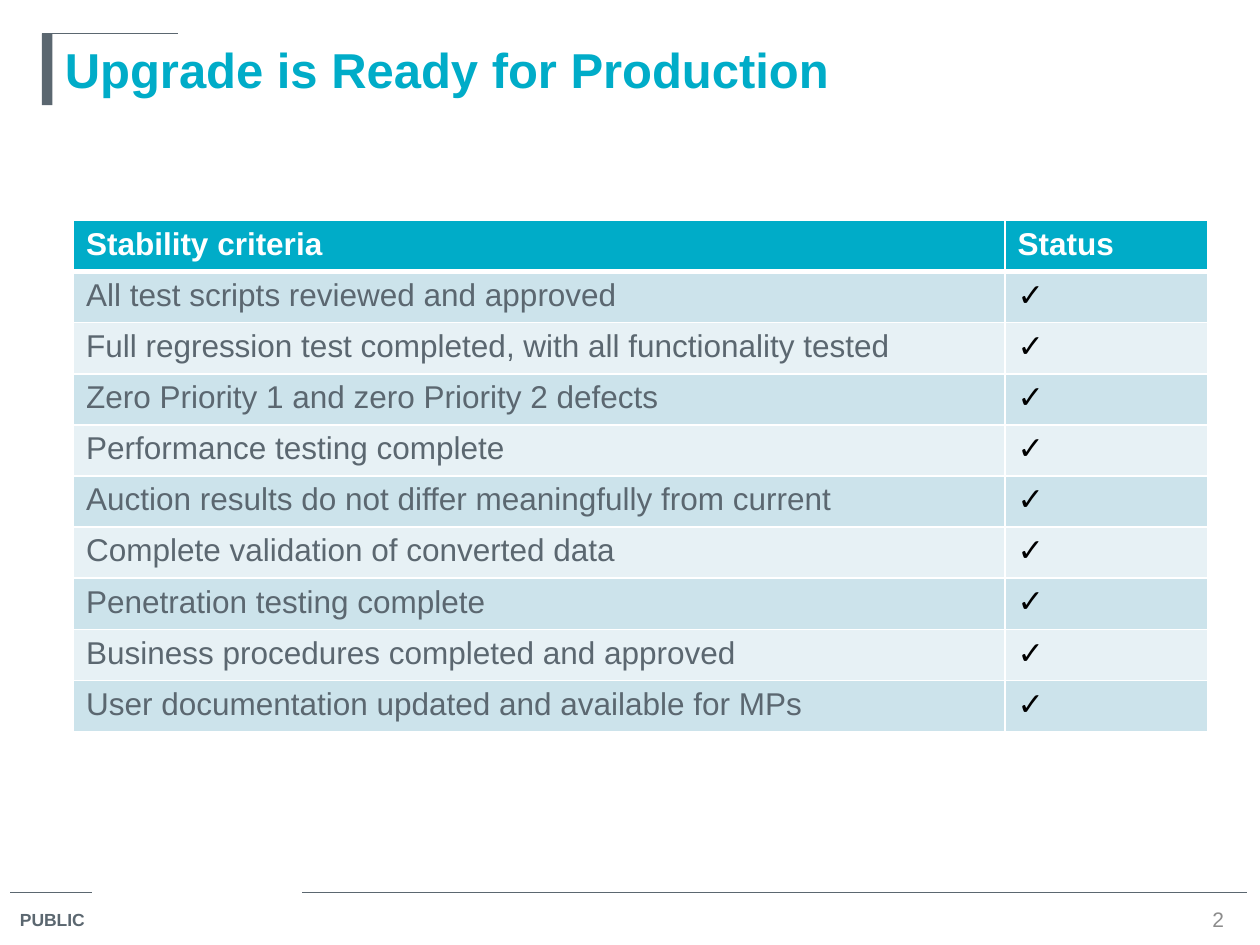
from pptx import Presentation
from pptx.dml.color import RGBColor
from pptx.enum.shapes import MSO_CONNECTOR, MSO_SHAPE
from pptx.enum.text import MSO_ANCHOR, PP_ALIGN
from pptx.oxml.ns import qn
from pptx.util import Pt
from lxml.etree import SubElement

TEAL = RGBColor(0x00, 0xAC, 0xC8)
SLATE = RGBColor(0x5B, 0x67, 0x70)
GRAY = RGBColor(0x8C, 0x8C, 0x8C)
WHITE = RGBColor(0xFF, 0xFF, 0xFF)
BLACK = RGBColor(0x00, 0x00, 0x00)
BAND_DARK = RGBColor(0xCC, 0xE3, 0xEB)
BAND_LIGHT = RGBColor(0xE7, 0xF1, 0xF5)


def write(frame, text, size, color, bold=False, bullet=None):
    frame.text = text
    paragraph = frame.paragraphs[0]
    if bullet:
        properties = paragraph._p.get_or_add_pPr()
        properties.set("marL", str(Pt(27)))
        properties.set("indent", str(-Pt(27)))
        SubElement(properties, qn("a:buFont"), typeface="Arial")
        SubElement(properties, qn("a:buChar"), char=bullet)
    paragraph.font.name = "Arial"
    paragraph.font.size = Pt(size)
    paragraph.font.bold = bold
    paragraph.font.color.rgb = color
    return paragraph


def add_borders(cell, bottom_width):
    properties = cell._tc.get_or_add_tcPr()
    for index, side in enumerate(("lnL", "lnR", "lnT", "lnB")):
        width = bottom_width if side == "lnB" else 1
        border = properties.makeelement(qn(f"a:{side}"), {"w": str(Pt(width))})
        fill = SubElement(border, qn("a:solidFill"))
        SubElement(fill, qn("a:srgbClr"), val=str(WHITE))
        properties.insert(index, border)


presentation = Presentation()
presentation.slide_width = Pt(720)
presentation.slide_height = Pt(540)
slide = presentation.slides.add_slide(presentation.slide_layouts[6])
shapes = slide.shapes

for left, right, y in [(5.8, 52.6, 510), (172.8, 712.8, 510), (24, 102, 19.2)]:
    rule = shapes.add_connector(MSO_CONNECTOR.STRAIGHT, Pt(left), Pt(y), Pt(right), Pt(y))
    rule.line.color.rgb = SLATE
    rule.line.width = Pt(0.75)
    SubElement(rule._element.spPr, qn("a:effectLst"))

accent_bar = shapes.add_shape(MSO_SHAPE.RECTANGLE, Pt(24), Pt(19.2), Pt(6), Pt(41))
accent_bar.shadow.inherit = False
accent_bar.fill.solid()
accent_bar.fill.fore_color.rgb = SLATE
accent_bar.line.fill.background()

classification = shapes.add_textbox(Pt(4.3), Pt(516.2), Pt(55.4), Pt(20)).text_frame
write(classification, "PUBLIC", 10, SLATE, True)

title = shapes.add_textbox(Pt(30), Pt(19), Pt(666), Pt(90)).text_frame
title.word_wrap = True
write(title, "Upgrade is Ready for Production", 28, TEAL, True)

criteria = [
    "All test scripts reviewed and approved",
    "Full regression test completed, with all functionality tested",
    "Zero Priority 1 and zero Priority 2 defects",
    "Performance testing complete",
    "Auction results do not differ meaningfully from current",
    "Complete validation of converted data",
    "Penetration testing complete",
    "Business procedures completed and approved",
    "User documentation updated and available for MPs",
]

checklist = shapes.add_table(len(criteria) + 1, 2, Pt(42), Pt(126), Pt(648), Pt(292)).table
checklist.columns[0].width = Pt(532.3)
checklist.columns[1].width = Pt(115.7)
for row_index, row in enumerate(checklist.rows):
    row.height = Pt(29.2)
    header = row_index == 0
    for cell in row.cells:
        cell.fill.solid()
        cell.fill.fore_color.rgb = TEAL if header else BAND_DARK if row_index % 2 else BAND_LIGHT
        add_borders(cell, 3 if header else 1)

for column_index, heading in enumerate(("Stability criteria", "Status")):
    write(checklist.cell(0, column_index).text_frame, heading, 18, WHITE, True)
for row_index, criterion in enumerate(criteria, start=1):
    write(checklist.cell(row_index, 0).text_frame, criterion, 18, SLATE)
    write(checklist.cell(row_index, 1).text_frame, " ", 18, BLACK, bullet="✓")

page_number = shapes.add_textbox(Pt(678.2), Pt(517), Pt(36), Pt(16.6)).text_frame
page_number.word_wrap = True
page_number.vertical_anchor = MSO_ANCHOR.MIDDLE
write(page_number, "2", 12, GRAY).alignment = PP_ALIGN.CENTER

presentation.save("out.pptx")
